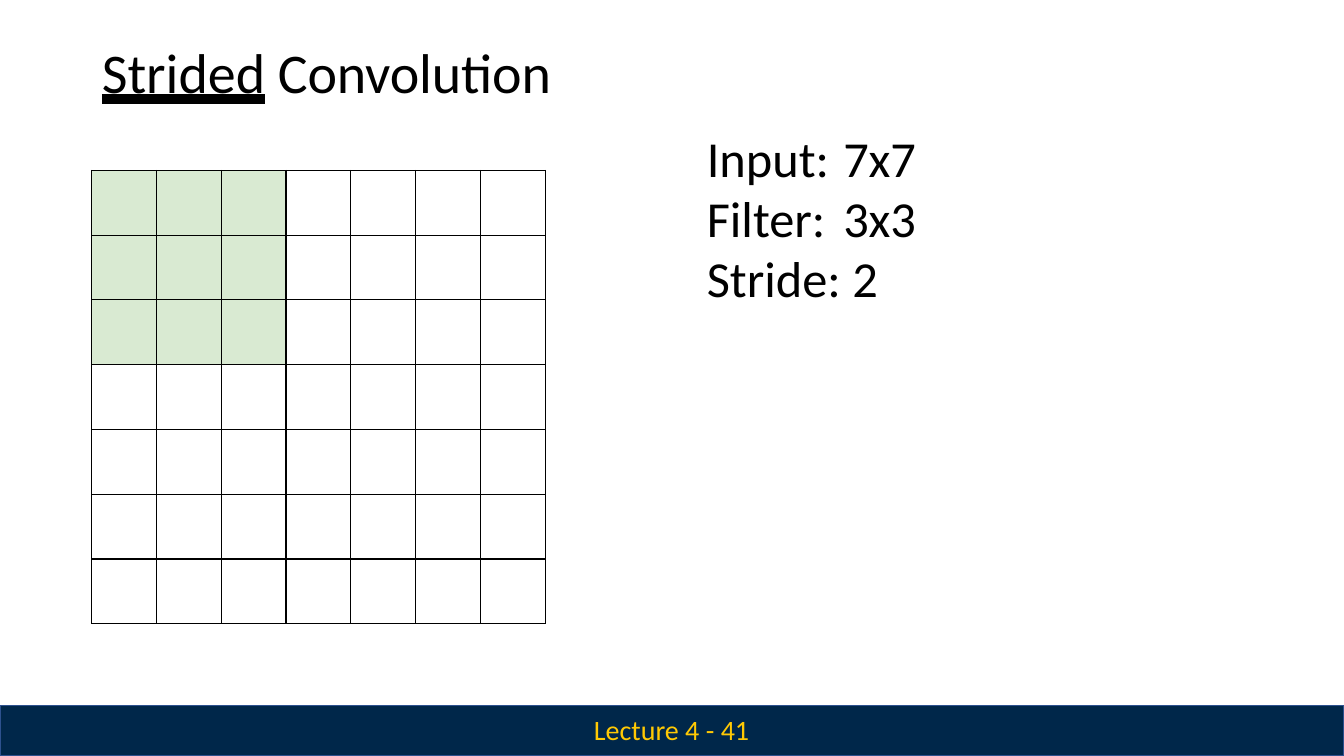
"""Build the strided convolution slide: input grid, sizes and lecture footer."""
from dataclasses import dataclass

from lxml.etree import SubElement
from pptx import Presentation
from pptx.dml.color import RGBColor
from pptx.enum.shapes import MSO_SHAPE as Preset
from pptx.enum.text import MSO_TEXT_UNDERLINE_TYPE as Underline
from pptx.enum.text import PP_ALIGN as Align
from pptx.oxml.ns import qn
from pptx.slide import Slide
from pptx.table import _Cell as Cell
from pptx.util import Inches, Pt

WIDTH, HEIGHT = 13.33, 7.5
INPUT_SIZE, FILTER_SIZE = 7, 3
GRID_LEFT, GRID_TOP, GRID_SIDE = 0.91, 1.69, 4.5
BLACK, NAVY, BLUE, GOLD, GREEN = "000000", "00274A", "2D518E", "FFC904", "D9EAD2"


@dataclass(frozen=True)
class Piece:
    text: str
    spacing: float = 0
    underline: Underline | None = None


@dataclass(frozen=True)
class Caption:
    left: float
    top: float
    width: float
    height: float
    size: int
    color: str
    pieces: tuple[Piece, ...]
    paragraph_format: dict
    top_inset: float = 0


CAPTIONS = (
    Caption(1, 0.36, 11.48, 0.69, 40, BLACK,
            (Piece("Strided", underline=Underline.HEAVY_LINE),
             Piece(" ", -0.4), Piece("Convolution", -0.1)),
            {"space_before": Pt(1)}, 0.01),
    Caption(5.88, 7.07, 1.61, 0.34, 20, GOLD,
            (Piece("Lecture 4 - "), Piece("41", -0.2)),
            {"space_before": Pt(0.1)}),
    Caption(7, 1.23, 2.08, 1.82, 36, BLACK,
            (Piece("Input: "), Piece("7x7 ", -0.2), Piece("Filter: "),
             Piece("3x3 ", -0.2), Piece("Stride: "), Piece("2", -0.5)),
            {"alignment": Align.JUSTIFY, "line_spacing": Pt(43), "space_before": Pt(2.1)},
            0.03),
)


def color_of(code: str) -> RGBColor:
    return RGBColor.from_string(code)


def apply_format(target: object, values: dict) -> None:
    for key, value in values.items():
        setattr(target, key, value)


def draw_banner(slide: Slide) -> None:
    banner = slide.shapes.add_shape(
        Preset.RECTANGLE, Inches(0), Inches(7), Inches(WIDTH), Inches(0.5))
    banner.shadow.inherit = False
    banner.fill.solid()
    banner.fill.fore_color.rgb = color_of(NAVY)
    banner.line.color.rgb = color_of(BLUE)
    banner.line.width = Pt(1)


def draw_caption(slide: Slide, caption: Caption) -> None:
    place = (caption.left, caption.top, caption.width, caption.height)
    frame = slide.shapes.add_textbox(*map(Inches, place)).text_frame
    apply_format(frame, {
        "word_wrap": True, "margin_left": 0, "margin_right": 0,
        "margin_top": Inches(caption.top_inset), "margin_bottom": 0})
    paragraph = frame.paragraphs[0]
    apply_format(paragraph, caption.paragraph_format)
    paragraph._p.get_or_add_pPr().set("marL", str(Inches(0.01)))
    for piece in caption.pieces:
        run = paragraph.add_run()
        run.text = piece.text
        apply_format(run.font, {
            "name": "Calibri", "size": Pt(caption.size), "underline": piece.underline})
        run.font.color.rgb = color_of(caption.color)
        run._r.get_or_add_rPr().set("spc", str(round(piece.spacing * 100)))


def add_borders(cell: Cell) -> None:
    properties = cell._tc.get_or_add_tcPr()
    for side in ("a:lnL", "a:lnR", "a:lnT", "a:lnB"):
        border = SubElement(properties, qn(side), w=str(Pt(1)))
        fill = SubElement(border, qn("a:solidFill"))
        SubElement(fill, qn("a:srgbClr"), val=BLACK)


def draw_input_grid(slide: Slide) -> None:
    grid = slide.shapes.add_table(
        INPUT_SIZE, INPUT_SIZE, Inches(GRID_LEFT), Inches(GRID_TOP),
        Inches(GRID_SIDE), Inches(GRID_SIDE)).table
    apply_format(grid, {"first_row": False, "horz_banding": False})
    for row in range(INPUT_SIZE):
        for column in range(INPUT_SIZE):
            cell = grid.cell(row, column)
            add_borders(cell)
            if max(row, column) < FILTER_SIZE:
                cell.fill.solid()
                cell.fill.fore_color.rgb = color_of(GREEN)
            else:
                cell.fill.background()


def main() -> None:
    deck = Presentation()
    apply_format(deck, {"slide_width": Inches(WIDTH), "slide_height": Inches(HEIGHT)})
    slide = deck.slides.add_slide(deck.slide_layouts[6])
    draw_banner(slide)
    draw_input_grid(slide)
    for caption in CAPTIONS:
        draw_caption(slide, caption)
    deck.save("out.pptx")


if __name__ == "__main__":
    main()
